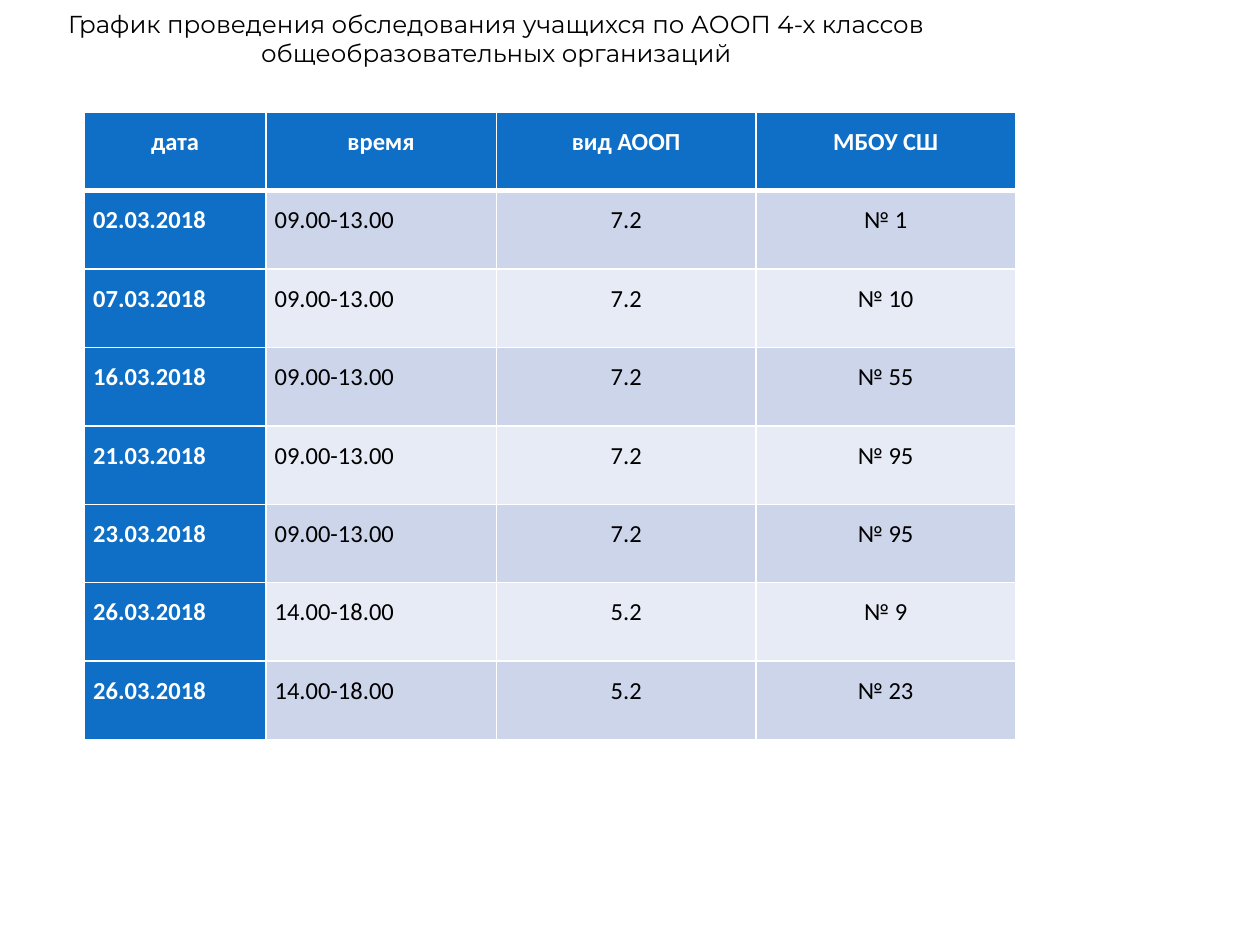
from lxml.etree import SubElement
from pptx import Presentation
from pptx.dml.color import RGBColor
from pptx.enum.text import MSO_ANCHOR, MSO_AUTO_SIZE, PP_ALIGN
from pptx.oxml import parse_xml
from pptx.oxml.ns import nsdecls, qn
from pptx.util import Inches, Pt

BLUE = RGBColor(0x0F, 0x6F, 0xC6)
BAND = RGBColor(0xCC, 0xD5, 0xEA)
PALE = RGBColor(0xE7, 0xEB, 0xF5)
WHITE = RGBColor(0xFF, 0xFF, 0xFF)
BLACK = RGBColor(0, 0, 0)

TITLE = [
    "График проведения обследования учащихся по АООП 4-х классов",
    "общеобразовательных организаций",
]
HEADS = ["дата", "время", "вид АООП", "МБОУ СШ"]
WIDTHS = [1.44, 1.83, 2.06, 2.06]
DAY, LATE = "09.00-13.00", "14.00-18.00"
VISITS = [
    ["02.03.2018", DAY, "7.2", "№ 1"],
    ["07.03.2018", DAY, "7.2", "№ 10"],
    ["16.03.2018", DAY, "7.2", "№ 55"],
    ["21.03.2018", DAY, "7.2", "№ 95"],
    ["23.03.2018", DAY, "7.2", "№ 95"],
    ["26.03.2018", LATE, "5.2", "№ 9"],
    ["26.03.2018", LATE, "5.2", "№ 23"],
]


def style(para, face, color, bold, align):
    para.alignment = align
    for run in para.runs:
        font = run.font
        font.name, font.size, font.bold = face, Pt(14), bold
        font.color.rgb = color


def add_title(slide, left, top, width, height):
    title = slide.shapes.title
    title.left, title.top = Inches(left), Inches(top)
    title.width, title.height = Inches(width), Inches(height)
    frame = title.text_frame
    frame.text = "\n".join(TITLE)
    frame.auto_size = MSO_AUTO_SIZE.NONE
    frame.word_wrap = False
    frame.vertical_anchor = MSO_ANCHOR.TOP
    for para in frame.paragraphs:
        style(para, "Montserrat", BLACK, False, PP_ALIGN.CENTER)


def set_edges(cell, row):
    props = cell._tc.get_or_add_tcPr()
    thick = {"B": row == 0, "T": row == 1}
    for index, side in enumerate("LRTB"):
        width = Pt(3 if thick.get(side) else 1)
        line = parse_xml(f'<a:ln{side} {nsdecls("a")} w="{width}"/>')
        fill = SubElement(line, qn("a:solidFill"))
        SubElement(fill, qn("a:srgbClr")).set("val", str(WHITE))
        props.insert(index, line)


def fill_cell(cell, text, row, col):
    key = row == 0 or col == 0
    center = row == 0 or col > 1
    cell.fill.solid()
    cell.fill.fore_color.rgb = BLUE if key else BAND if row % 2 else PALE
    cell.margin_left = cell.margin_right = Inches(0.07)
    cell.margin_top = cell.margin_bottom = 0
    cell.text_frame.text = text
    para = cell.text_frame.paragraphs[0]
    para.line_spacing = 1.5
    style(para, "Calibri", WHITE if key else BLACK, key,
          PP_ALIGN.CENTER if center else PP_ALIGN.LEFT)
    set_edges(cell, row)


def add_plan(slide, left, top, width, height):
    rows = [HEADS] + VISITS
    table = slide.shapes.add_table(
        len(rows), len(HEADS), Inches(left), Inches(top),
        Inches(width), Inches(height)).table
    for column, size in zip(table.columns, WIDTHS):
        column.width = Inches(size)
    for row, texts in enumerate(rows):
        for col, text in enumerate(texts):
            fill_cell(table.cell(row, col), text, row, col)


def main():
    deck = Presentation()
    deck.slide_width, deck.slide_height = Inches(10), Inches(7.5)
    slide = deck.slides.add_slide(deck.slide_layouts[5])
    add_plan(slide, 0.67, 0.89, sum(WIDTHS), 4.98)
    add_title(slide, 0.12, 0.02, 7.64, 0.88)
    deck.save("out.pptx")


if __name__ == "__main__":
    main()
